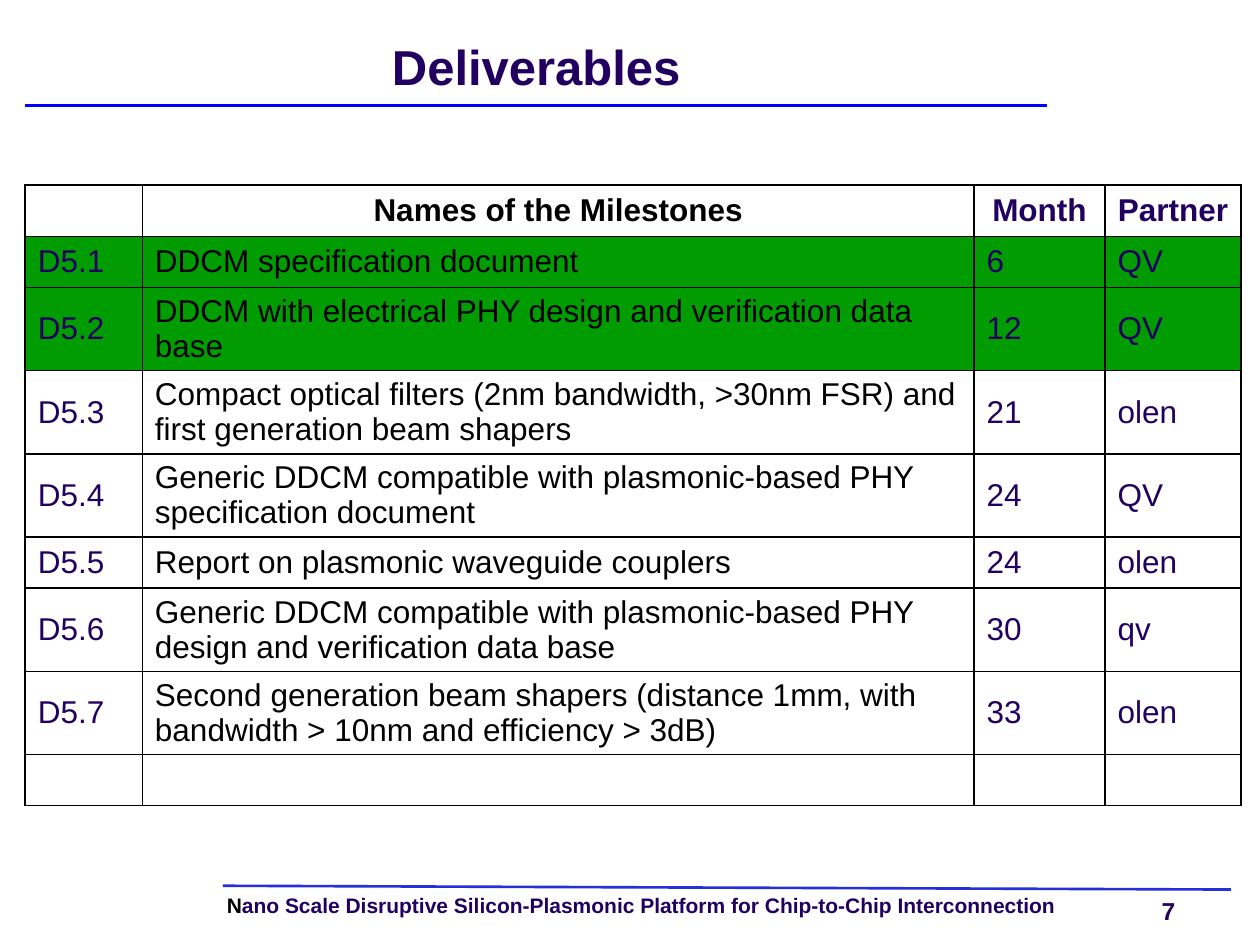
from lxml import etree
from pptx import Presentation, util as u
from pptx.dml.color import RGBColor
from pptx.enum import shapes, text
from pptx.oxml import ns

WIDTH, HEIGHT = 10, 7.5
INDIGO, BLACK, GREEN = "220060", "000000", "009C01"
COLUMNS = [0.93, 6.6, 1.04, 1.08]
ROW_HEIGHT = u.Cm(1.03).inches
HEADINGS = ["", "Names of the Milestones", "Month", "Partner"]
DELIVERABLES = [
    ("D5.1", "DDCM specification document", "6", "QV"),
    ("D5.2", "DDCM with electrical PHY design and verification data base", "12", "QV"),
    ("D5.3", "Compact optical filters (2nm bandwidth, >30nm FSR) and first generation beam shapers", "21", "olen"),
    ("D5.4", "Generic DDCM compatible with plasmonic-based PHY specification document", "24", "QV"),
    ("D5.5", "Report on plasmonic waveguide couplers", "24", "olen"),
    ("D5.6", "Generic DDCM compatible with plasmonic-based PHY design and verification data base", "30", "qv"),
    ("D5.7", "Second generation beam shapers (distance 1mm, with bandwidth > 10nm and efficiency > 3dB)", "33", "olen"),
    ("", "", "", ""),
]
COMPLETED = {"D5.1", "D5.2"}


def colour(hex_string):
    """Turn a hex string into a colour."""
    return RGBColor.from_string(hex_string)


def add_run(paragraph, wording, size, hex_string, bold=True):
    """Append one formatted run to a paragraph."""
    run = paragraph.add_run()
    run.text = wording
    run.font.name = "Arial"
    run.font.size = u.Pt(size)
    run.font.bold = bold
    run.font.color.rgb = colour(hex_string)


def add_label(slide, box, wrap=True):
    """Add a text box without margins and return its frame."""
    frame = slide.shapes.add_textbox(*map(u.Inches, box)).text_frame
    frame.margin_left = frame.margin_right = 0
    frame.margin_top = frame.margin_bottom = 0
    frame.word_wrap = wrap
    return frame


def add_rule(slide, start, end, hex_string):
    """Draw a thin straight rule between two points."""
    rule = slide.shapes.add_connector(
        shapes.MSO_CONNECTOR.STRAIGHT, *map(u.Inches, (*start, *end)))
    rule.line.color.rgb = colour(hex_string)
    rule.line.width = u.Pt(1.5)
    etree.SubElement(rule._element.spPr, ns.qn("a:effectLst"))


def add_heading(slide, box):
    """Place the centred title with the rule across its lower edge."""
    left, top, width, height = box
    frame = add_label(slide, box)
    frame.vertical_anchor = text.MSO_ANCHOR.MIDDLE
    title = frame.paragraphs[0]
    title.alignment = text.PP_ALIGN.CENTER
    title.line_spacing = u.Pt(32)
    add_run(title, "Deliverables", 28, INDIGO)
    rule_y = top + 0.95 * height
    add_rule(slide, (left, rule_y), (left + width, rule_y), "0000FF")


def border_cell(cell):
    """Give a cell thin black borders on all sides."""
    properties = cell._tc.get_or_add_tcPr()
    for side in ("a:lnL", "a:lnR", "a:lnT", "a:lnB"):
        border = etree.SubElement(properties, ns.qn(side), w=str(u.Pt(1)))
        fill = etree.SubElement(border, ns.qn("a:solidFill"))
        etree.SubElement(fill, ns.qn("a:srgbClr"), val=BLACK)


def add_deliverables(slide, box):
    """Place the deliverables table, with completed rows in green."""
    rows = [HEADINGS, *DELIVERABLES]
    frame = slide.shapes.add_table(len(rows), len(COLUMNS), *map(u.Inches, box))
    table = frame.table
    table.first_row = table.horz_banding = False
    for column, width in zip(table.columns, COLUMNS):
        column.width = u.Inches(box[2] * width / sum(COLUMNS))
    for r, row in enumerate(rows):
        table.rows[r].height = u.Inches(box[3] / len(rows))
        for c, wording in enumerate(row):
            cell = table.cell(r, c)
            border_cell(cell)
            if row[0] in COMPLETED:
                cell.fill.solid()
                cell.fill.fore_color.rgb = colour(GREEN)
            else:
                cell.fill.background()
            cell.vertical_anchor = text.MSO_ANCHOR.MIDDLE
            cell.margin_top = cell.margin_bottom = u.Inches(0.03)
            if wording:
                entry = cell.text_frame.paragraphs[0]
                if r == 0:
                    entry.alignment = text.PP_ALIGN.CENTER
                add_run(entry, wording, 18, BLACK if c == 1 else INDIGO, bold=r == 0)


def add_footer(slide, box):
    """Place the footer rule, project name and page number."""
    left, top, width, height = box
    add_rule(slide, (left, top), (left + width, top + 0.03), "262FDA")
    text_top = top + 0.08
    project = add_label(slide, (left + 0.03, text_top, 7.14, 0.18)).paragraphs[0]
    project.line_spacing = 0.9
    add_run(project, "N", 12, BLACK)
    add_run(project, "ano Scale Disruptive Silicon-Plasmonic Platform for "
            "Chip-to-Chip Interconnection", 12, INDIGO)
    page = add_label(slide, (left + width - 0.55, text_top, 0.4, height - 0.08), wrap=False)
    add_run(page.paragraphs[0], "7", 14, INDIGO)


def main():
    """Build and save the deliverables slide."""
    deck = Presentation()
    deck.slide_width, deck.slide_height = u.Inches(WIDTH), u.Inches(HEIGHT)
    slide = deck.slides.add_slide(deck.slide_layouts[6])
    margin = 0.02 * WIDTH
    add_heading(slide, (margin, margin, 8.11, 0.67))
    add_deliverables(slide, (margin, 1.47, sum(COLUMNS), ROW_HEIGHT * (len(DELIVERABLES) + 1)))
    add_footer(slide, (1.77, 7.03, 8, 0.31))
    deck.save("out.pptx")


if __name__ == "__main__":
    main()
